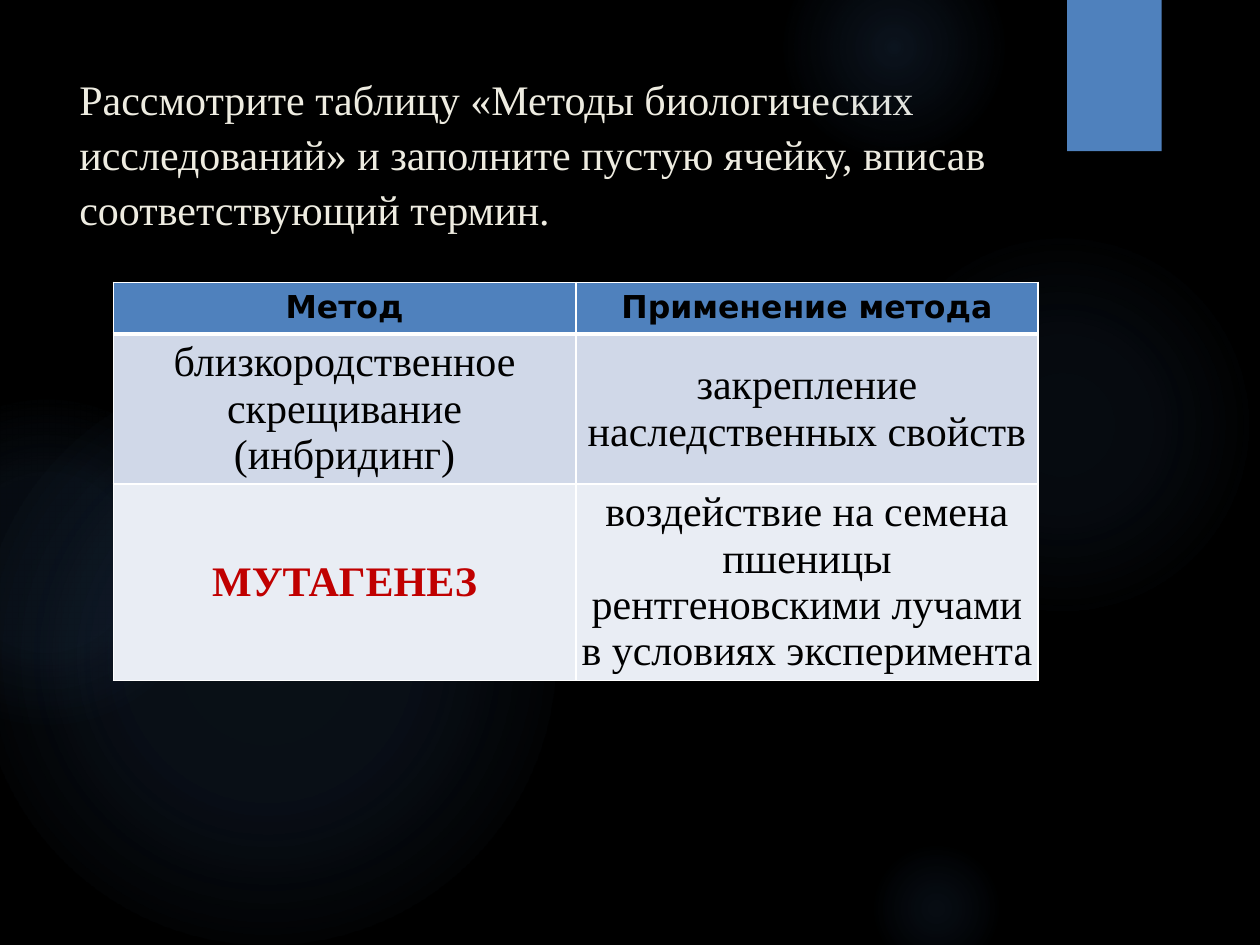
from lxml.etree import SubElement
from pptx import Presentation
from pptx.dml.color import RGBColor
from pptx.enum.shapes import MSO_SHAPE
from pptx.enum.text import MSO_ANCHOR, MSO_AUTO_SIZE, PP_ALIGN
from pptx.oxml import parse_xml
from pptx.oxml.ns import nsdecls, qn
from pptx.util import Inches, Pt

SERIF, SANS = "Times New Roman", "DejaVu Sans"
BLUE, GLOW_BLUE, WHITE, BLACK, RED = "4F81BD", "558ED5", "FFFFFF", "000000", "C00000"

# Left, top, diameter, then (position %, opacity %) of each gradient stop
GLOWS = [
    (6.89, 1.83, 3.08, [(0, 7), (36, 6), (69, 0)]),
    (6.22, -0.5, 1.75, [(0, 14), (36, 7), (73, 0)]),
    (6.89, 6.67, 1.08, [(0, 9), (36, 5), (66, 0)]),
    (-0.17, 2.92, 4.58, [(0, 11), (36, 10), (75, 0)]),
    (-0.92, 3.17, 2.58, [(0, 8), (36, 8), (72, 0)]),
]

TITLE = ("Рассмотрите таблицу «Методы биологических исследований» "
         "и заполните пустую ячейку, вписав соответствующий термин.")
METHODS = [
    ("Метод", "Применение метода"),
    ("близкородственное скрещивание (инбридинг)", "закрепление наследственных свойств"),
    ("МУТАГЕНЕЗ",
     "воздействие на семена пшеницы рентгеновскими лучами в условиях эксперимента"),
]
ROW_FILLS = [BLUE, "D0D8E8", "E9EDF4"]
ROW_HEIGHTS = [0.41, 1.19, 1.56]
ANSWER = (2, 0)


def rgb(value):
    return RGBColor.from_string(value)


def add_run(paragraph, text, font, size, color, bold=False):
    run = paragraph.add_run()
    run.text = text
    run.font.name = font
    run.font.size = Pt(size)
    run.font.bold = bold
    run.font.color.rgb = rgb(color)


def add_plain_shape(slide, kind, left, top, width, height):
    shape = slide.shapes.add_shape(
        kind, Inches(left), Inches(top), Inches(width), Inches(height))
    shape.shadow.inherit = False
    shape.line.fill.background()
    return shape


def add_glow(slide, left, top, diameter, stops):
    glow = add_plain_shape(slide, MSO_SHAPE.OVAL, left, top, diameter, diameter)
    stop_xml = "".join(
        f'<a:gs pos="{position * 1000}"><a:srgbClr val="{GLOW_BLUE}">'
        f'<a:alpha val="{opacity * 1000}"/></a:srgbClr></a:gs>'
        for position, opacity in stops)
    gradient = parse_xml(
        f'<a:gradFill {nsdecls("a")} rotWithShape="1"><a:gsLst>{stop_xml}</a:gsLst>'
        '<a:path path="circle"><a:fillToRect l="50000" t="50000" r="50000" b="50000"/>'
        '</a:path></a:gradFill>')
    glow._element.spPr.find(qn("a:prstGeom")).addnext(gradient)


def add_ribbon(slide):
    ribbon = add_plain_shape(slide, MSO_SHAPE.RECTANGLE, 8.47, 0, 0.75, 1.2)
    ribbon.fill.solid()
    ribbon.fill.fore_color.rgb = rgb(BLUE)
    ribbon._element.spPr.find(qn("a:effectLst")).append(parse_xml(
        f'<a:outerShdw {nsdecls("a")} blurRad="{Pt(3)}" dist="{Pt(2)}" dir="5400000" '
        f'rotWithShape="0"><a:srgbClr val="{BLACK}"><a:alpha val="45000"/></a:srgbClr>'
        '</a:outerShdw>'))


def set_title(slide):
    title = slide.shapes.title
    title.left, title.top = Inches(0.53), Inches(0.5)
    title.width, title.height = Inches(7.72), Inches(1.53)
    frame = title.text_frame
    frame.word_wrap = True
    frame.auto_size = MSO_AUTO_SIZE.NONE
    frame.vertical_anchor = MSO_ANCHOR.TOP
    paragraph = frame.paragraphs[0]
    paragraph.alignment = PP_ALIGN.LEFT
    paragraph.line_spacing = 1.09
    add_run(paragraph, TITLE, SERIF, 24, "EEECE1")


def set_borders(cell, widths):
    properties = cell._tc.get_or_add_tcPr()
    for index, (side, width) in enumerate(widths.items()):
        line = SubElement(properties, qn(f"a:ln{side}"), w=str(Pt(width)))
        fill = SubElement(line, qn("a:solidFill"))
        SubElement(fill, qn("a:srgbClr"), val=WHITE)
        properties.insert(index, line)  # borders come before the fill


def fill_cell(cell, row, column, text):
    cell.vertical_anchor = MSO_ANCHOR.MIDDLE
    cell.margin_left = cell.margin_right = Inches(0.03)
    cell.margin_top = cell.margin_bottom = Inches(0.04)
    cell.fill.solid()
    cell.fill.fore_color.rgb = rgb(ROW_FILLS[row])
    set_borders(cell, {"L": 1, "R": 1, "T": 3 if row == 1 else 1, "B": 3 if row == 0 else 1})
    paragraph = cell.text_frame.paragraphs[0]
    paragraph.alignment = PP_ALIGN.CENTER
    if row == 0:
        add_run(paragraph, text, SANS, 18, BLACK, bold=True)
    elif (row, column) == ANSWER:
        add_run(paragraph, text, SERIF, 24, RED, bold=True)
    else:
        add_run(paragraph, text, SERIF, 24, BLACK)


def add_methods_table(slide):
    table = slide.shapes.add_table(
        len(METHODS), 2, Inches(0.9), Inches(2.24),
        Inches(7.34), Inches(sum(ROW_HEIGHTS))).table
    for row, texts in enumerate(METHODS):
        table.rows[row].height = Inches(ROW_HEIGHTS[row])
        for column, text in enumerate(texts):
            fill_cell(table.cell(row, column), row, column, text)


def main():
    presentation = Presentation()
    presentation.slide_width, presentation.slide_height = Inches(10), Inches(7.5)
    slide = presentation.slides.add_slide(presentation.slide_layouts[5])

    # Dark backdrop with soft glows and the corner ribbon
    slide.background.fill.solid()
    slide.background.fill.fore_color.rgb = rgb(BLACK)
    for glow in GLOWS:
        add_glow(slide, *glow)
    add_ribbon(slide)

    # Task and table of methods
    set_title(slide)
    add_methods_table(slide)
    presentation.save("out.pptx")


if __name__ == "__main__":
    main()
